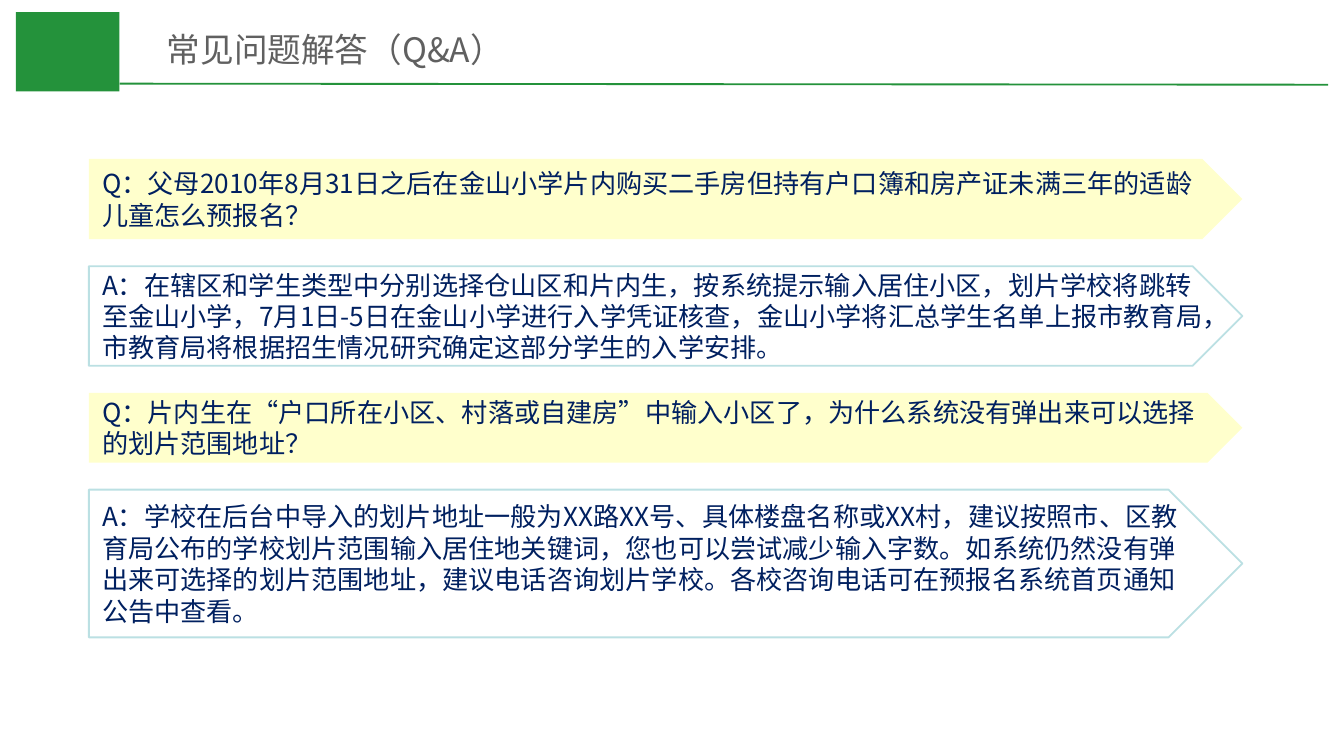
"""Build the Q&A slide: a header bar and four stacked pentagon panels."""
from lxml import etree
from pptx import Presentation
from pptx.dml.color import RGBColor
from pptx.enum.shapes import MSO_CONNECTOR, MSO_SHAPE
from pptx.enum.text import MSO_ANCHOR, MSO_AUTO_SIZE, PP_ALIGN
from pptx.oxml.ns import qn
from pptx.util import Cm, Pt

RECT, PENTAGON = MSO_SHAPE.RECTANGLE, MSO_SHAPE.PENTAGON
STRAIGHT = MSO_CONNECTOR.STRAIGHT
MIDDLE, BOTTOM = MSO_ANCHOR.MIDDLE, MSO_ANCHOR.BOTTOM
LEFT = PP_ALIGN.LEFT
NO_FIT = MSO_AUTO_SIZE.NONE

FONT = "Noto Sans CJK SC"
GREEN, GREY, NAVY = "24923B", "606060", "002060"
YELLOW, PALE_BLUE = "FFFFCC", "BBE0E3"

TITLE = "常见问题解答（Q&A）"
PANELS = [
    (1.52, YELLOW, None,
     "Q：父母2010年8月31日之后在金山小学片内购买二手房但持有户口簿和房产证未满三年的适龄儿童怎么预报名？"),
    (1.88, "FFFFFF", PALE_BLUE,
     "A：在辖区和学生类型中分别选择仓山区和片内生，按系统提示输入居住小区，划片学校将跳转至金山小学，"
     "7月1日-5日在金山小学进行入学凭证核查，金山小学将汇总学生名单上报市教育局，"
     "市教育局将根据招生情况研究确定这部分学生的入学安排。"),
    (1.32, YELLOW, None,
     "Q：片内生在“户口所在小区、村落或自建房”中输入小区了，为什么系统没有弹出来可以选择的划片范围地址？"),
    (2.79, None, PALE_BLUE,
     "A：学校在后台中导入的划片地址一般为XX路XX号、具体楼盘名称或XX村，"
     "建议按照市、区教育局公布的学校划片范围输入居住地关键词，您也可以尝试减少输入字数。"
     "如系统仍然没有弹出来可选择的划片范围地址，建议电话咨询划片学校。"
     "各校咨询电话可在预报名系统首页通知公告中查看。"),
]
PANEL_LEFT, PANEL_TOP, PANEL_WIDTH, PANEL_GAP = 1.68, 3, 21.8, 0.51


def rgb(color):
    return RGBColor.from_string(color)


def add_box(s, kind, left, top, width, height, fill=None, line=None):
    sp = s.shapes.add_shape(kind, Cm(left), Cm(top), Cm(width), Cm(height))
    sp.shadow.inherit = False
    if fill:
        sp.fill.solid()
        sp.fill.fore_color.rgb = rgb(fill)
    else:
        sp.fill.background()
    if line:
        sp.line.color.rgb = rgb(line)
        sp.line.width = Pt(1)
    else:
        sp.line.fill.background()
    return sp


def write(sp, text, size, color, anchor, spacing=None):
    tf = sp.text_frame
    tf.word_wrap = True
    tf.auto_size = NO_FIT
    tf.vertical_anchor = anchor
    p = tf.paragraphs[0]
    p.alignment = LEFT
    p.line_spacing = spacing
    r = p.add_run()
    r.text = text
    r.font.size = Pt(size)
    r.font.color.rgb = rgb(color)
    r.font.name = FONT
    etree.SubElement(r._r.get_or_add_rPr(), qn("a:ea"), typeface=FONT)


def main():
    prs = Presentation()
    prs.slide_width, prs.slide_height = Cm(25.4), Cm(14.28)
    s = prs.slides.add_slide(prs.slide_layouts[5])

    add_box(s, RECT, 0.3, 0.23, 1.96, 1.5, GREEN)
    rule = s.shapes.add_connector(STRAIGHT, Cm(2.26), Cm(1.58), Cm(25.1), Cm(1.6))
    rule.line.color.rgb = rgb(GREEN)
    rule.line.width = Pt(1)
    etree.SubElement(rule._element.spPr, qn("a:effectLst"))

    title = s.shapes.title
    title.left, title.top, title.width, title.height = Cm(2.9), Cm(0.36), Cm(21.6), Cm(1.07)
    write(title, TITLE, 18, GREY, BOTTOM)

    top = PANEL_TOP
    for height, fill, line, text in PANELS:
        sp = add_box(s, PENTAGON, PANEL_LEFT, top, PANEL_WIDTH, height, fill, line)
        write(sp, text, 14, NAVY, MIDDLE, Pt(16.8))
        top += height + PANEL_GAP

    prs.save("out.pptx")


if __name__ == "__main__":
    main()
